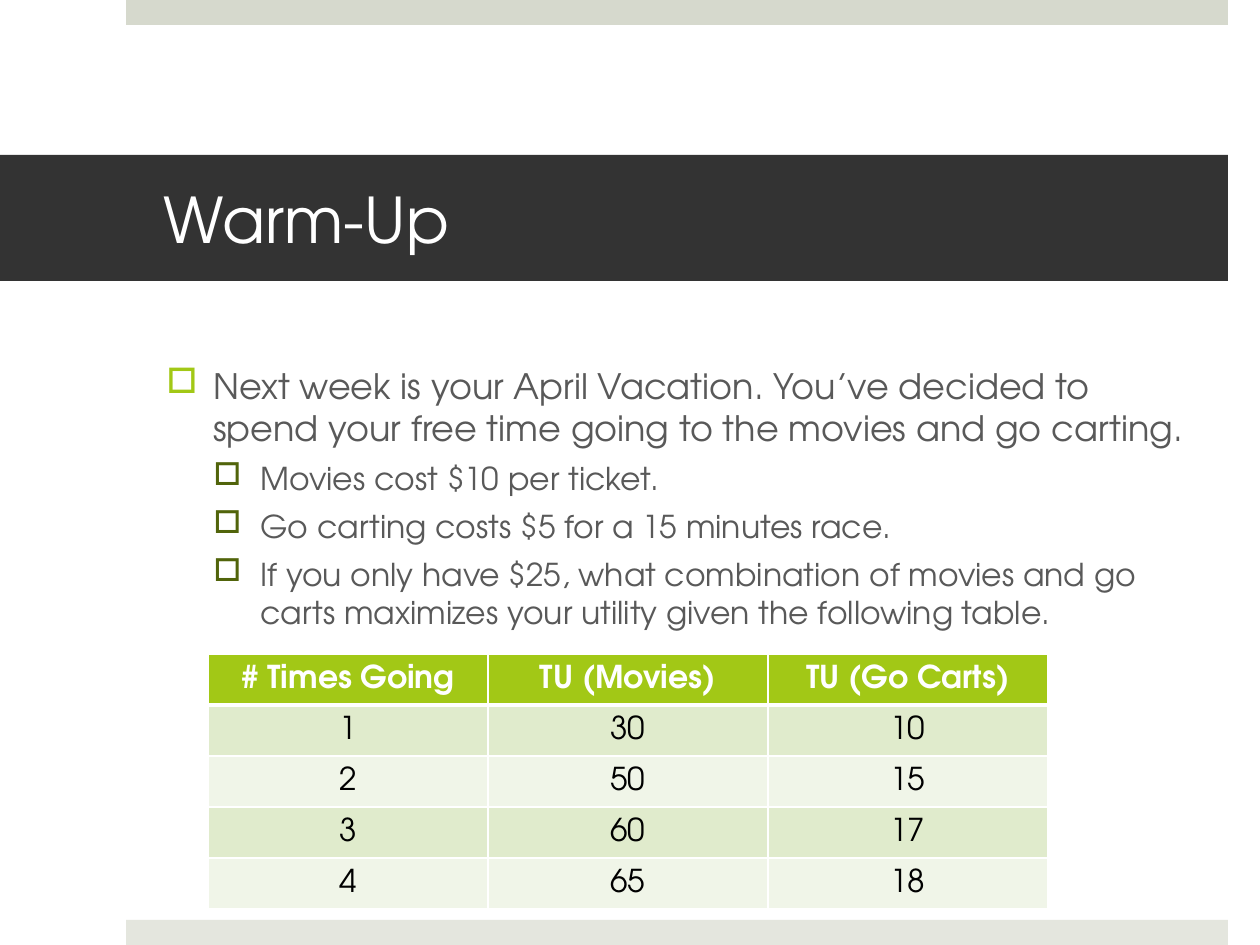
"""Build the Warm-Up slide: a title band, a bulleted problem and a utility table."""
from lxml import etree
from pptx import Presentation
from pptx.dml.color import RGBColor
from pptx.enum.shapes import MSO_SHAPE
from pptx.enum.text import MSO_ANCHOR, PP_ALIGN
from pptx.oxml.ns import qn
from pptx.util import Emu, Pt

RECTANGLE = MSO_SHAPE.RECTANGLE
MIDDLE = MSO_ANCHOR.MIDDLE
LEFT, CENTER = PP_ALIGN.LEFT, PP_ALIGN.CENTER
FONT, BULLET_FONT = "TeX Gyre Adventor", "OpenSymbol"
COLORS = {
    "top bar": "D6D9CD", "bottom bar": "E4E6DE", "band": "333333",
    "white": "FFFFFF", "black": "000000", "body": "595959",
    "lime": "A2C816", "olive": "51640B", "odd row": "E0EBCC", "even row": "F0F5E8",
}

TITLE = "Warm-Up"
BULLETS = [
    (0, "Next week is your April Vacation. You’ve decided to spend your free time "
        "going to the movies and go carting."),
    (1, "Movies cost $10 per ticket."),
    (1, "Go carting costs $5 for a 15 minutes race."),
    (1, "If you only have $25, what combination of movies and go carts maximizes "
        "your utility given the following table."),
]
LEVELS = [
    {"size": 20, "before": 20, "bullet": "lime", "indent": 47},
    {"size": 18, "before": 6, "bullet": "olive", "indent": 94},
]
HANGING = 47
UTILITY = [
    ("# Times Going", "TU (Movies)", "TU (Go Carts)"),
    (1, 30, 10),
    (2, 50, 15),
    (3, 60, 17),
    (4, 65, 18),
]
BARS = [
    ("top bar", (126, 0, 1102, 25)),
    ("bottom bar", (126, 920, 1102, 25)),
    ("band", (0, 155, 1228, 126)),
]
BODY_BOX = (154, 358, 1048, 505)
TABLE_LEFT, TABLE_TOP, COLUMN_WIDTH, ROW_HEIGHT = 208, 654, 280, 51


def px(length):
    return Emu(round(length * 914400 / 126))


def rgb(color):
    return RGBColor.from_string(COLORS[color])


def write(paragraph, text, size=18, color="body", bold=False, align=LEFT,
          before=0, bullet=None, indent=0):
    paragraph.alignment = align
    paragraph.space_before = Pt(before)
    run = paragraph.add_run()
    run.text = text
    run.font.name, run.font.size, run.font.bold = FONT, Pt(size), bold
    run.font.color.rgb = rgb(color)
    if bullet:
        properties = paragraph._p.get_or_add_pPr()
        properties.set("marL", str(px(indent)))
        properties.set("indent", str(-px(HANGING)))
        bullet_color = etree.SubElement(properties, qn("a:buClr"))
        etree.SubElement(bullet_color, qn("a:srgbClr"), val=COLORS[bullet])
        etree.SubElement(properties, qn("a:buFont"), typeface=BULLET_FONT)
        etree.SubElement(properties, qn("a:buChar"), char="□")


def add_bar(slide, color, box):
    bar = slide.shapes.add_shape(RECTANGLE, *map(px, box))
    bar.shadow.inherit = False
    bar.fill.solid()
    bar.fill.fore_color.rgb = rgb(color)
    bar.line.fill.background()
    return bar


def add_title(band):
    frame = band.text_frame
    frame.word_wrap = True
    frame.vertical_anchor = MIDDLE
    frame.margin_left, frame.margin_right = px(164), px(38)
    write(frame.paragraphs[0], TITLE, size=36, color="white")


def add_bullets(slide):
    frame = slide.shapes.add_textbox(*map(px, BODY_BOX)).text_frame
    frame.word_wrap = True
    for index, (level, text) in enumerate(BULLETS):
        paragraph = frame.add_paragraph() if index else frame.paragraphs[0]
        paragraph.level = level
        write(paragraph, text, **LEVELS[level])


def set_borders(cell, bottom):
    properties = cell._tc.get_or_add_tcPr()
    widths = {"lnL": 1, "lnR": 1, "lnT": 1, "lnB": bottom}
    for position, (side, width) in enumerate(widths.items()):
        border = etree.Element(qn(f"a:{side}"), w=str(Pt(width)))
        fill = etree.SubElement(border, qn("a:solidFill"))
        etree.SubElement(fill, qn("a:srgbClr"), val=COLORS["white"])
        properties.insert(position, border)


def add_utility_table(slide):
    rows, columns = len(UTILITY), len(UTILITY[0])
    box = (TABLE_LEFT, TABLE_TOP, columns * COLUMN_WIDTH, rows * ROW_HEIGHT)
    table = slide.shapes.add_table(rows, columns, *map(px, box)).table
    for column in table.columns:
        column.width = px(COLUMN_WIDTH)
    for r, values in enumerate(UTILITY):
        table.rows[r].height = px(ROW_HEIGHT)
        header = r == 0
        fill = "lime" if header else "odd row" if r % 2 else "even row"
        for c, value in enumerate(values):
            cell = table.cell(r, c)
            cell.fill.solid()
            cell.fill.fore_color.rgb = rgb(fill)
            cell.vertical_anchor = MIDDLE
            write(cell.text_frame.paragraphs[0], str(value), align=CENTER,
                  color="white" if header else "black", bold=header)
            set_borders(cell, bottom=3 if header else 1)


def main():
    deck = Presentation()
    deck.slide_width, deck.slide_height = px(1260), px(945)
    slide = deck.slides.add_slide(deck.slide_layouts[6])
    bars = {color: add_bar(slide, color, box) for color, box in BARS}
    add_title(bars["band"])
    add_bullets(slide)
    add_utility_table(slide)
    deck.save("out.pptx")


if __name__ == "__main__":
    main()
